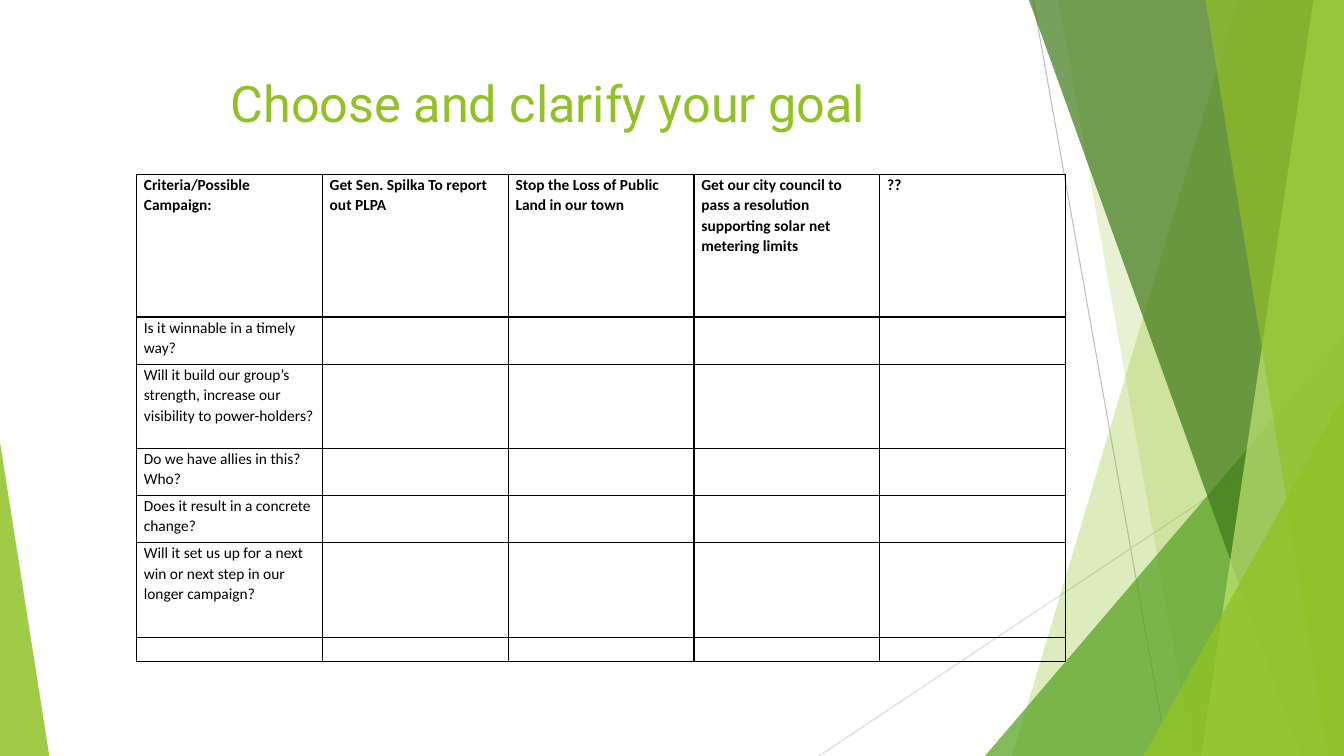
from dataclasses import dataclass

from pptx import Presentation
from pptx.dml.color import RGBColor
from pptx.enum.shapes import MSO_CONNECTOR, MSO_SHAPE
from pptx.enum.text import MSO_ANCHOR, PP_ALIGN
from pptx.oxml.ns import qn
from pptx.util import Emu, Pt
from lxml.etree import SubElement


@dataclass(frozen=True)
class Theme:
    lime: str = "90C226"
    green: str = "54A021"
    forest: str = "3F7819"
    pale: str = "C0E474"
    grey: str = "BFBFBF"
    silver: str = "D9D9D9"
    black: str = "000000"
    title_font: str = "Roboto"
    body_font: str = "Calibri"
    title_size: int = 36
    body_size: int = 11


THEME = Theme()
EMU_PER_PX = 9525
WIDTH, HEIGHT = 1280, 720
COLUMN = 177
ROWS = [136, 45, 80, 45, 45, 90, 23]
CAMPAIGNS = [
    "Criteria/Possible Campaign:",
    "Get Sen. Spilka To report out PLPA",
    "Stop the Loss of Public Land in our town",
    "Get our city council to pass a resolution supporting solar net metering limits",
    "??",
]
CRITERIA = [
    "Is it winnable in a timely way?",
    "Will it build our group’s strength, increase our visibility to power-holders?",
    "Do we have allies in this? Who?",
    "Does it result in a concrete change?",
    "Will it set us up for a next win or next step in our longer campaign?",
    "",
]


def px(n):
    return Emu(n * EMU_PER_PX)


def rgb(color):
    return RGBColor.from_string(color)


def set_text(tf, text, font, size, color, bold=False, align=PP_ALIGN.LEFT, spacing=1.0):
    p = tf.paragraphs[0]
    p.alignment = align
    p.line_spacing = spacing
    if not text:
        SubElement(p._p, qn("a:endParaRPr"), sz=str(size * 100))
        return
    r = p.add_run()
    r.text = text
    r.font.name = font
    r.font.size = Pt(size)
    r.font.bold = bold
    r.font.color.rgb = rgb(color)


def paint(sp, color, opacity):
    sp.shadow.inherit = False
    sp.line.fill.background()
    sp.fill.solid()
    sp.fill.fore_color.rgb = rgb(color)
    clr = sp.element.spPr.find(qn("a:solidFill")).find(qn("a:srgbClr"))
    SubElement(clr, qn("a:alpha"), val=str(opacity * 1000))


def add_band(slide, top_x, bottom_x, color, opacity):
    builder = slide.shapes.build_freeform(top_x, 0, scale=EMU_PER_PX)
    builder.add_line_segments([(WIDTH, 0), (WIDTH, HEIGHT), (bottom_x, HEIGHT)])
    paint(builder.convert_to_shape(), color, opacity)


def add_triangle(slide, x, y, width, apex, color, opacity):
    sp = slide.shapes.add_shape(
        MSO_SHAPE.ISOSCELES_TRIANGLE, px(x), px(y), px(width), px(HEIGHT - y)
    )
    sp.adjustments[0] = apex
    paint(sp, color, opacity)


def add_line(slide, x1, y1, x2, y2, color):
    line = slide.shapes.add_connector(
        MSO_CONNECTOR.STRAIGHT, px(x1), px(y1), px(x2), px(y2)
    )
    line.line.color.rgb = rgb(color)
    line.line.width = Pt(0.75)
    SubElement(line.element.spPr, qn("a:effectLst"))


def add_facets(slide):
    add_line(slide, 984, 0, 1112, HEIGHT, THEME.grey)
    add_line(slide, WIDTH, 387, 780, HEIGHT, THEME.silver)
    add_band(slide, 1179, 964, THEME.lime, 30)
    add_band(slide, 1008, 1136, THEME.lime, 20)
    add_triangle(slide, 938, 320, 342, 1, THEME.green, 72)
    add_band(slide, 980, 1239, THEME.forest, 70)
    add_band(slide, 1251, 1144, THEME.pale, 70)
    add_band(slide, 1148, 1265, THEME.lime, 65)
    add_triangle(slide, 1089, 377, 191, 1, THEME.lime, 80)
    add_triangle(slide, 0, 421, 47, 0, THEME.lime, 85)


def add_title(slide, text):
    tf = slide.shapes.add_textbox(px(71), px(64), px(902), px(138)).text_frame
    tf.word_wrap = True
    tf.vertical_anchor = MSO_ANCHOR.TOP
    set_text(tf, text, THEME.title_font, THEME.title_size, THEME.lime,
             align=PP_ALIGN.CENTER)


def format_cell(cell, text, bold):
    cell.margin_left = cell.margin_right = px(7)
    cell.margin_top = cell.margin_bottom = 0
    tc_pr = cell._tc.get_or_add_tcPr()
    for side in ("lnL", "lnR", "lnT", "lnB"):
        ln = SubElement(tc_pr, qn(f"a:{side}"), w=str(Pt(1)))
        fill = SubElement(ln, qn("a:solidFill"))
        SubElement(fill, qn("a:srgbClr"), val=THEME.black)
    cell.fill.background()
    set_text(cell.text_frame, text, THEME.body_font, THEME.body_size, THEME.black,
             bold=bold, spacing=1.07)


def add_goal_table(slide):
    columns = len(CAMPAIGNS)
    table = slide.shapes.add_table(
        len(ROWS), columns, px(130), px(166), px(COLUMN * columns), px(sum(ROWS))
    ).table
    table.first_row = table.horz_banding = False
    for column in table.columns:
        column.width = px(COLUMN)
    blanks = [""] * (columns - 1)
    content = [CAMPAIGNS] + [[question] + blanks for question in CRITERIA]
    for i, (height, texts) in enumerate(zip(ROWS, content)):
        table.rows[i].height = px(height)
        for j, text in enumerate(texts):
            format_cell(table.cell(i, j), text, bold=i == 0)


def main():
    prs = Presentation()
    prs.slide_width, prs.slide_height = px(WIDTH), px(HEIGHT)
    slide = prs.slides.add_slide(prs.slide_layouts[6])
    add_facets(slide)
    add_title(slide, "Choose and clarify your goal")
    add_goal_table(slide)
    prs.save("out.pptx")


if __name__ == "__main__":
    main()
